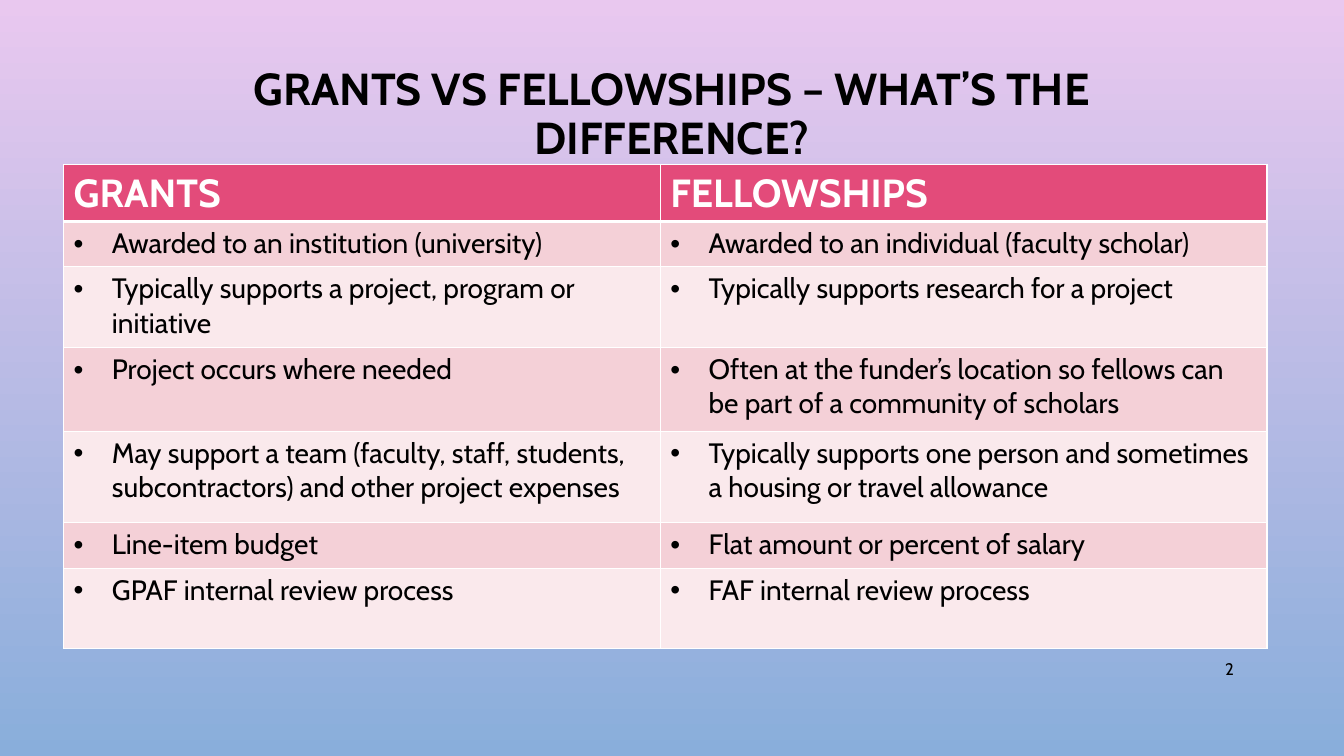
from dataclasses import dataclass

from lxml.etree import SubElement
from pptx import Presentation
from pptx.dml.color import RGBColor
from pptx.enum.text import MSO_ANCHOR as Anchor, MSO_AUTO_SIZE as AutoSize, PP_ALIGN as Align
from pptx.oxml.ns import qn
from pptx.util import Inches, Pt


@dataclass(frozen=True)
class Theme:
    font: str = "Cabin"
    ink: str = "000000"
    white: str = "FFFFFF"
    sky: tuple = ("E9C8EF", "89AEDB")
    header: str = "E34B7A"
    bands: tuple = ("F4D0D7", "FAE9EC")
    title_size: int = 32
    header_size: int = 28
    body_size: int = 20
    number_size: int = 12
    bullet_indent: float = 0.38


HEADINGS = ("GRANTS", "FELLOWSHIPS")
COMPARISON = (
    ("Awarded to an institution (university)",
     "Awarded to an individual (faculty scholar)"),
    ("Typically supports a project, program or initiative",
     "Typically supports research for a project"),
    ("Project occurs where needed",
     "Often at the funder’s location so fellows can be part of a community of scholars"),
    ("May support a team (faculty, staff, students, subcontractors) and other project expenses",
     "Typically supports one person and sometimes a housing or travel allowance"),
    ("Line-item budget", "Flat amount or percent of salary"),
    ("GPAF internal review process", "FAF internal review process"),
)
# Shares of the slide's width and height, in percent
COLUMN_SHARES = (44.4, 45.15)
ROW_SHARES = (7.47, 6, 10.67, 11.07, 12.13, 6, 10.67)


def apply(target, **values):
    for name, value in values.items():
        setattr(target, name, value)


class SlideBuilder:
    def __init__(self, deck, theme):
        self.deck, self.theme = deck, theme
        self.slide = deck.slides.add_slide(deck.slide_layouts[5])

    def across(self, percent):
        return round(self.deck.slide_width * percent / 100)

    def down(self, percent):
        return round(self.deck.slide_height * percent / 100)

    def box(self, left, top, width, height):
        return self.across(left), self.down(top), self.across(width), self.down(height)

    def add_text(self, frame, text, size, color, bold=False, **paragraph_format):
        paragraph = frame.paragraphs[0]
        apply(paragraph, **paragraph_format)
        run = paragraph.add_run()
        run.text = text
        apply(run.font, name=self.theme.font, size=Pt(size), bold=bold)
        run.font.color.rgb = RGBColor.from_string(color)
        return paragraph

    def background(self):
        fill = self.slide.background.fill
        fill.gradient()
        fill.gradient_angle = 270
        for stop, color in zip(fill.gradient_stops, self.theme.sky):
            stop.color.rgb = RGBColor.from_string(color)

    def title(self, text, *place):
        heading = self.slide.shapes.title
        apply(heading, **dict(zip(("left", "top", "width", "height"), self.box(*place))))
        apply(heading.text_frame, word_wrap=True, auto_size=AutoSize.NONE,
              vertical_anchor=Anchor.MIDDLE)
        self.add_text(heading.text_frame, text, self.theme.title_size, self.theme.ink, True,
                      alignment=Align.CENTER, line_spacing=0.9)

    def page_number(self, number, *place):
        frame = self.slide.shapes.add_textbox(*self.box(*place)).text_frame
        apply(frame, word_wrap=True, vertical_anchor=Anchor.MIDDLE)
        self.add_text(frame, number, self.theme.number_size, self.theme.ink,
                      alignment=Align.RIGHT)

    def bullet(self, paragraph):
        properties = paragraph._p.get_or_add_pPr()
        indent = Inches(self.theme.bullet_indent)
        properties.set("marL", str(indent))
        properties.set("indent", str(-indent))
        SubElement(properties, qn("a:buFont"), typeface="Arial")
        SubElement(properties, qn("a:buChar"), char="•")

    def paint_cell(self, cell, color, bottom):
        """Draw the borders before the fill, as the cell's XML order requires."""
        properties = cell._tc.get_or_add_tcPr()
        for side, width in (("L", 1), ("R", 1), ("T", 1), ("B", bottom)):
            line = SubElement(properties, qn(f"a:ln{side}"), w=str(Pt(width)))
            SubElement(SubElement(line, qn("a:solidFill")), qn("a:srgbClr"),
                       val=self.theme.white)
        cell.fill.solid()
        cell.fill.fore_color.rgb = RGBColor.from_string(color)

    def comparison_table(self, left, top):
        theme = self.theme
        place = self.box(left, top, sum(COLUMN_SHARES), sum(ROW_SHARES))
        table = self.slide.shapes.add_table(
            len(ROW_SHARES), len(COLUMN_SHARES), *place).table
        for column, share in zip(table.columns, COLUMN_SHARES):
            column.width = self.across(share)
        for row, share in zip(table.rows, ROW_SHARES):
            row.height = self.down(share)
        for r, texts in enumerate((HEADINGS, *COMPARISON)):
            for c, text in enumerate(texts):
                cell = table.cell(r, c)
                if r == 0:
                    self.paint_cell(cell, theme.header, 3)
                    self.add_text(cell.text_frame, text, theme.header_size, theme.white, True)
                else:
                    self.paint_cell(cell, theme.bands[(r - 1) % 2], 1)
                    self.bullet(self.add_text(cell.text_frame, text, theme.body_size, theme.ink))


def main():
    deck = Presentation()
    apply(deck, slide_width=Inches(13.33), slide_height=Inches(7.5))
    builder = SlideBuilder(deck, Theme())
    builder.background()
    builder.title("GRANTS VS FELLOWSHIPS – WHAT’S THE DIFFERENCE?", 7.5, 9.07, 85, 12.4)
    builder.page_number("2", 86.25, 85.73, 6.3, 5.33)
    builder.comparison_table(4.73, 21.73)
    deck.save("out.pptx")


if __name__ == "__main__":
    main()
